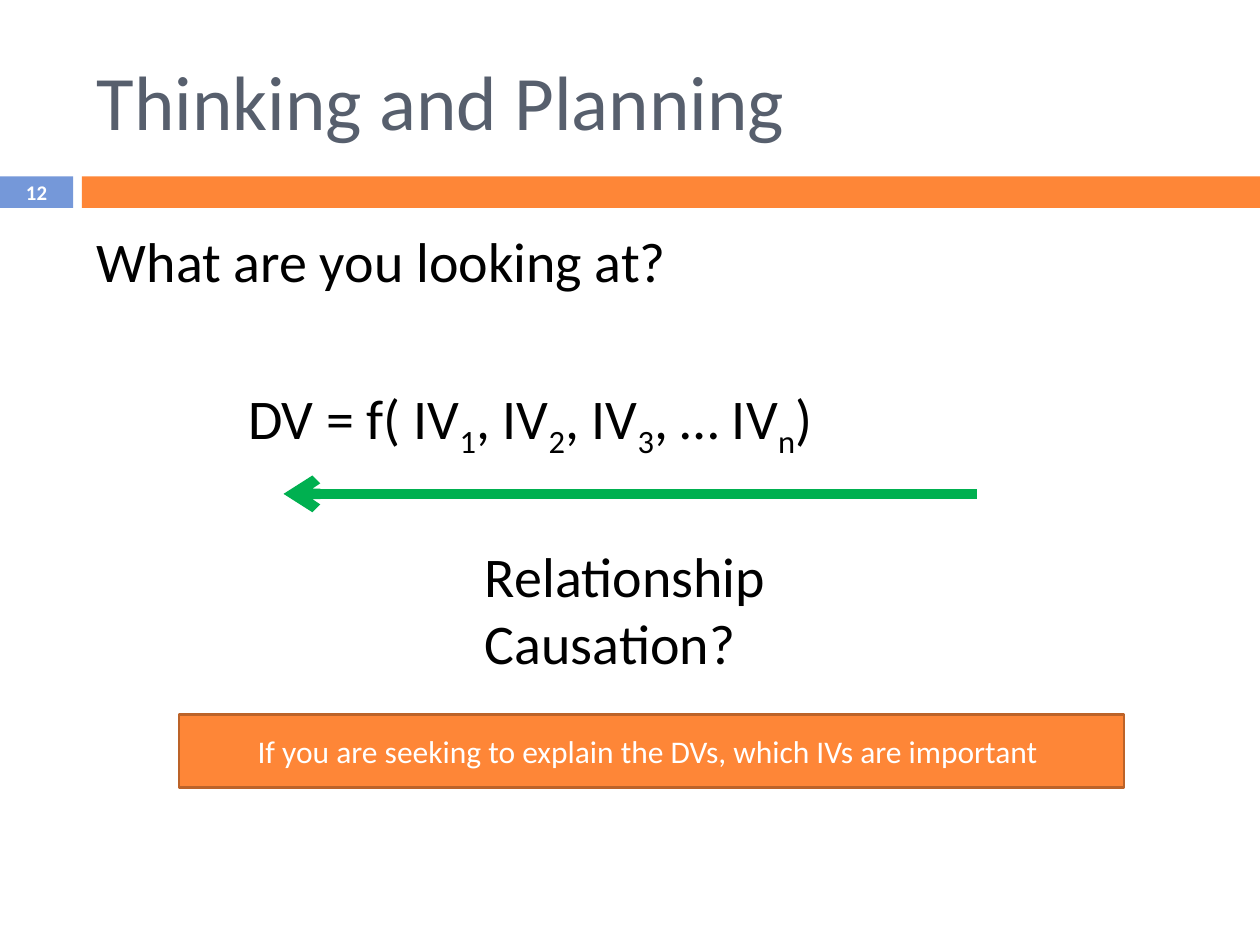
from dataclasses import dataclass

from lxml import etree
from pptx import Presentation
from pptx.dml.color import RGBColor
from pptx.enum import shapes, text
from pptx.oxml import ns
from pptx.util import Inches, Pt

FONT = "Calibri"
ORANGE, BLUE, GREEN, BROWN = "FE8637", "7598D9", "00B050", "BC6329"
SLATE, BLACK, WHITE = "575F6D", "000000", "FFFFFF"


@dataclass(frozen=True)
class Box:
    left: float
    top: float
    width: float
    height: float

    def lengths(self) -> tuple:
        return tuple(Inches(v) for v in (self.left, self.top, self.width, self.height))


@dataclass(frozen=True)
class Style:
    size: float
    color: str = BLACK
    bold: bool = False
    align: text.PP_ALIGN = text.PP_ALIGN.LEFT
    anchor: text.MSO_ANCHOR = text.MSO_ANCHOR.TOP


BODY = Style(32)


def rgb(color: str) -> RGBColor:
    return RGBColor.from_string(color)


def format_run(run, style: Style) -> None:
    run.font.name = FONT
    run.font.size = Pt(style.size)
    run.font.bold = style.bold
    run.font.color.rgb = rgb(style.color)


def write(shape, lines: list[str], style: Style, wrap: bool = True) -> None:
    frame = shape.text_frame
    frame.word_wrap = wrap
    frame.vertical_anchor = style.anchor
    frame.text = "\n".join(lines)
    for paragraph in frame.paragraphs:
        paragraph.alignment = style.align
        for run in paragraph.runs:
            format_run(run, style)


def add_text(slide, box: Box, lines: list[str], style: Style, wrap: bool = True):
    label = slide.shapes.add_textbox(*box.lengths())
    write(label, lines, style, wrap)
    return label


def add_bar(slide, box: Box, fill: str, outline: str | None = None):
    bar = slide.shapes.add_shape(shapes.MSO_SHAPE.RECTANGLE, *box.lengths())
    bar.shadow.inherit = False
    bar.fill.solid()
    bar.fill.fore_color.rgb = rgb(fill)
    if outline:
        bar.line.color.rgb = rgb(outline)
        bar.line.width = Pt(1.5)
    else:
        bar.line.fill.background()
    return bar


def add_formula(frame, parts: list[tuple[str, str]]) -> None:
    """Append an indented paragraph of (base text, subscript) pairs."""
    paragraph = frame.add_paragraph()
    paragraph.space_before = Pt(51)
    paragraph._p.get_or_add_pPr().set("marL", str(Inches(1.2)))
    for base, subscript in parts:
        for content, offset in ((base, "0"), (subscript, "-25000")):
            if content:
                run = paragraph.add_run()
                run.text = content
                format_run(run, BODY)
                run._r.get_or_add_rPr().set("baseline", offset)


def add_arrow(slide, start_x: float, end_x: float, y: float) -> None:
    arrow = slide.shapes.add_connector(
        shapes.MSO_CONNECTOR.STRAIGHT,
        Inches(start_x), Inches(y), Inches(end_x), Inches(y))
    arrow.line.color.rgb = rgb(GREEN)
    arrow.line.width = Pt(6)
    head = etree.SubElement(arrow.line._get_or_add_ln(), ns.qn("a:tailEnd"))
    head.set("type", "arrow")
    etree.SubElement(arrow._element.spPr, ns.qn("a:effectLst"))


def main() -> None:
    deck = Presentation()
    deck.slide_width, deck.slide_height = Inches(10), Inches(7.5)
    slide = deck.slides.add_slide(deck.slide_layouts[6])
    center, middle = text.PP_ALIGN.CENTER, text.MSO_ANCHOR.MIDDLE

    number_bar = add_bar(slide, Box(0, 1.4, 0.58, 0.25), BLUE)
    write(number_bar, ["12"], Style(11.9, WHITE, True, center, middle))
    add_bar(slide, Box(0.65, 1.4, 9.35, 0.25), ORANGE)
    add_text(slide, Box(0.67, 0.25, 8.92, 1.08), ["Thinking and Planning"],
             Style(44, SLATE, anchor=middle))

    question = add_text(slide, Box(0.67, 1.75, 8.92, 4.92),
                        ["What are you looking at?"], BODY)
    add_formula(question.text_frame, [
        ("DV = f( IV", "1"), (", IV", "2"), (", IV", "3"), (", … IV", "n"), (")", "")])
    add_arrow(slide, 7.75, 2.25, 3.92)
    add_text(slide, Box(3.75, 4.25, 2.45, 1.18), ["Relationship", "Causation?"],
             BODY, wrap=False)

    callout = add_bar(slide, Box(1.42, 5.67, 7.5, 0.58), ORANGE, BROWN)
    write(callout, ["If you are seeking to explain the DVs, which IVs are important "],
          Style(18, WHITE, align=center, anchor=middle))

    deck.save("out.pptx")


if __name__ == "__main__":
    main()
